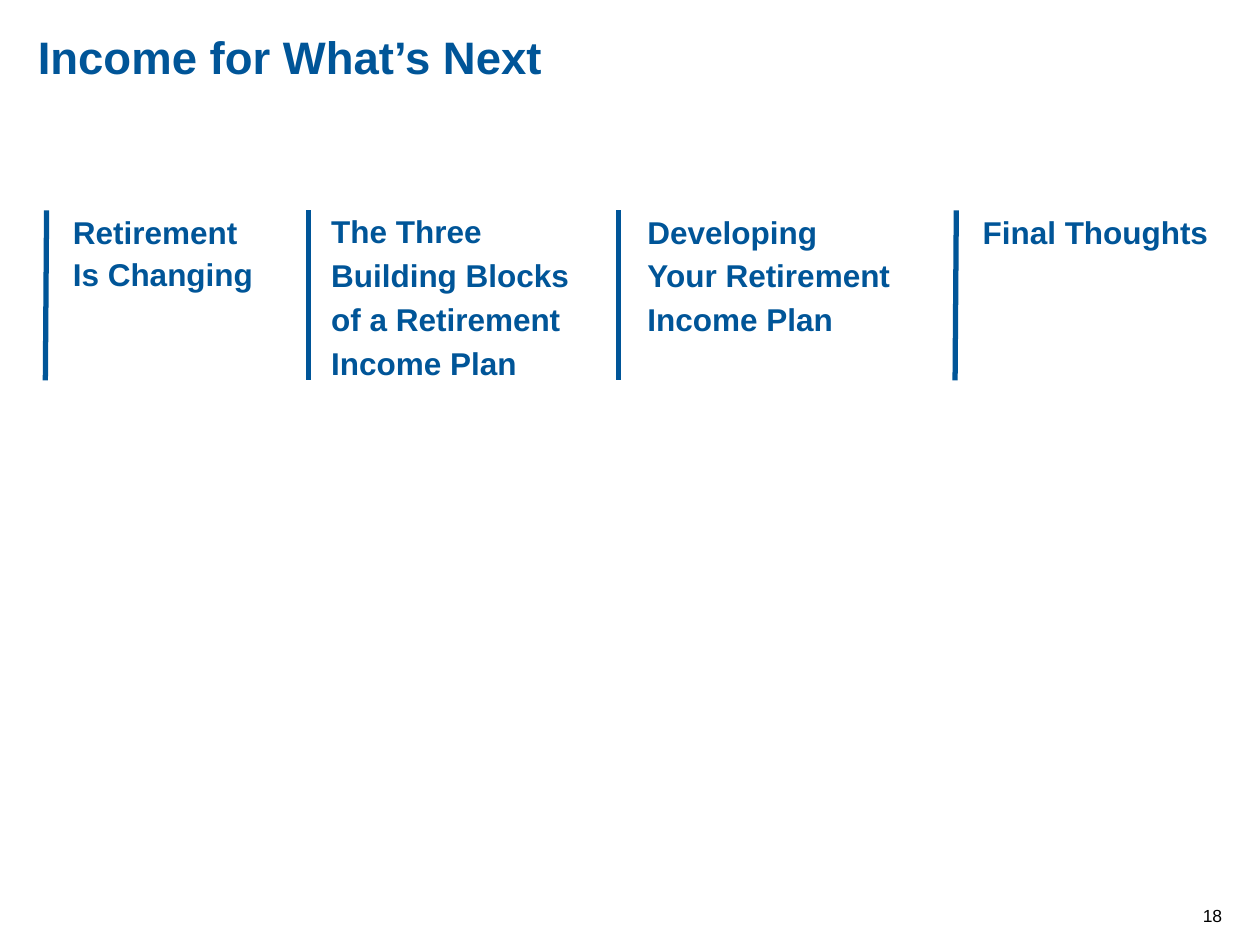
"""Build the agenda slide "Income for What's Next" with four ruled topics."""
from lxml import etree
from pptx import Presentation
from pptx.dml.color import RGBColor
from pptx.enum.shapes import MSO_CONNECTOR
from pptx.enum.text import MSO_ANCHOR, MSO_AUTO_SIZE, PP_ALIGN
from pptx.oxml.ns import qn
from pptx.util import Inches, Pt

STRAIGHT = MSO_CONNECTOR.STRAIGHT
TOP, BOTTOM = MSO_ANCHOR.TOP, MSO_ANCHOR.BOTTOM
LEFT, RIGHT = PP_ALIGN.LEFT, PP_ALIGN.RIGHT
NO_FIT, GROW = MSO_AUTO_SIZE.NONE, MSO_AUTO_SIZE.SHAPE_TO_FIT_TEXT
BLUE = RGBColor(0x00, 0x55, 0x98)
BLACK = RGBColor(0x00, 0x00, 0x00)

TITLE = "Income for What’s Next"
PAGE_NUMBER = "18"
TOPICS = [
    {"text": "Retirement\vIs Changing",
     "box": (0.48, 1.61, 2.23, 0.77), "spacing": 24, "rule": (0.37, 0.36)},
    {"text": "The Three\vBuilding Blocks\vof a Retirement Income Plan",
     "box": (2.53, 1.59, 2.69, 1.5), "spacing": 25, "rule": (2.45, 2.45)},
    {"text": "Developing\vYour Retirement Income Plan",
     "box": (5.04, 1.59, 2.48, 1.15), "spacing": 25, "rule": (4.91, 4.91)},
    {"text": "Final Thoughts",
     "box": (7.7, 1.61, 2.48, 0.41), "spacing": 24, "rule": (7.59, 7.58)},
]
RULE_TOP, RULE_BOTTOM = 1.67, 3.02

TITLE_FONT = {"name": "Arial", "size": Pt(26), "bold": True}
TOPIC_FONT = {"name": "Arial", "size": Pt(18), "bold": True}
NUMBER_FONT = {"name": "Arial", "size": Pt(10), "bold": False}
FLUSH = {"margin_left": 0, "margin_top": 0, "margin_right": 0,
         "margin_bottom": 0, "word_wrap": True, "auto_size": NO_FIT}
GROWING = {"word_wrap": True, "auto_size": GROW, "vertical_anchor": TOP}


def apply(target, values):
    for name, value in values.items():
        setattr(target, name, value)


def write(holder, text, frame_format, paragraph_format, font_format, color):
    frame = holder.text_frame
    frame.text = text
    apply(frame, frame_format)
    paragraph = frame.paragraphs[0]
    apply(paragraph, paragraph_format)
    for run in paragraph.runs:
        apply(run.font, font_format)
        run.font.color.rgb = color


def add_rule(slide, top_x, bottom_x):
    rule = slide.shapes.add_connector(
        STRAIGHT, Inches(top_x), Inches(RULE_TOP),
        Inches(bottom_x), Inches(RULE_BOTTOM))
    rule.line.color.rgb = BLUE
    rule.line.width = Pt(3)
    etree.SubElement(rule._element.spPr, qn("a:effectLst"))


def main():
    deck = Presentation()
    deck.slide_width, deck.slide_height = Inches(10), Inches(7.5)
    slide = deck.slides.add_slide(deck.slide_layouts[5])

    title = slide.shapes.title
    apply(title, {"left": Inches(0.3), "top": Inches(0.23),
                  "width": Inches(7), "height": Inches(0.8)})
    write(title, TITLE, {**FLUSH, "vertical_anchor": TOP},
          {"alignment": LEFT}, TITLE_FONT, BLUE)

    for topic in TOPICS:
        label = slide.shapes.add_textbox(*map(Inches, topic["box"]))
        write(label, topic["text"], GROWING,
              {"alignment": LEFT, "line_spacing": Pt(topic["spacing"])},
              TOPIC_FONT, BLUE)
        add_rule(slide, *topic["rule"])

    number = slide.shapes.add_textbox(*map(Inches, (9.3, 7.15, 0.4, 0.2)))
    write(number, PAGE_NUMBER, {**FLUSH, "vertical_anchor": BOTTOM},
          {"alignment": RIGHT}, NUMBER_FONT, BLACK)

    deck.save("out.pptx")


if __name__ == "__main__":
    main()
